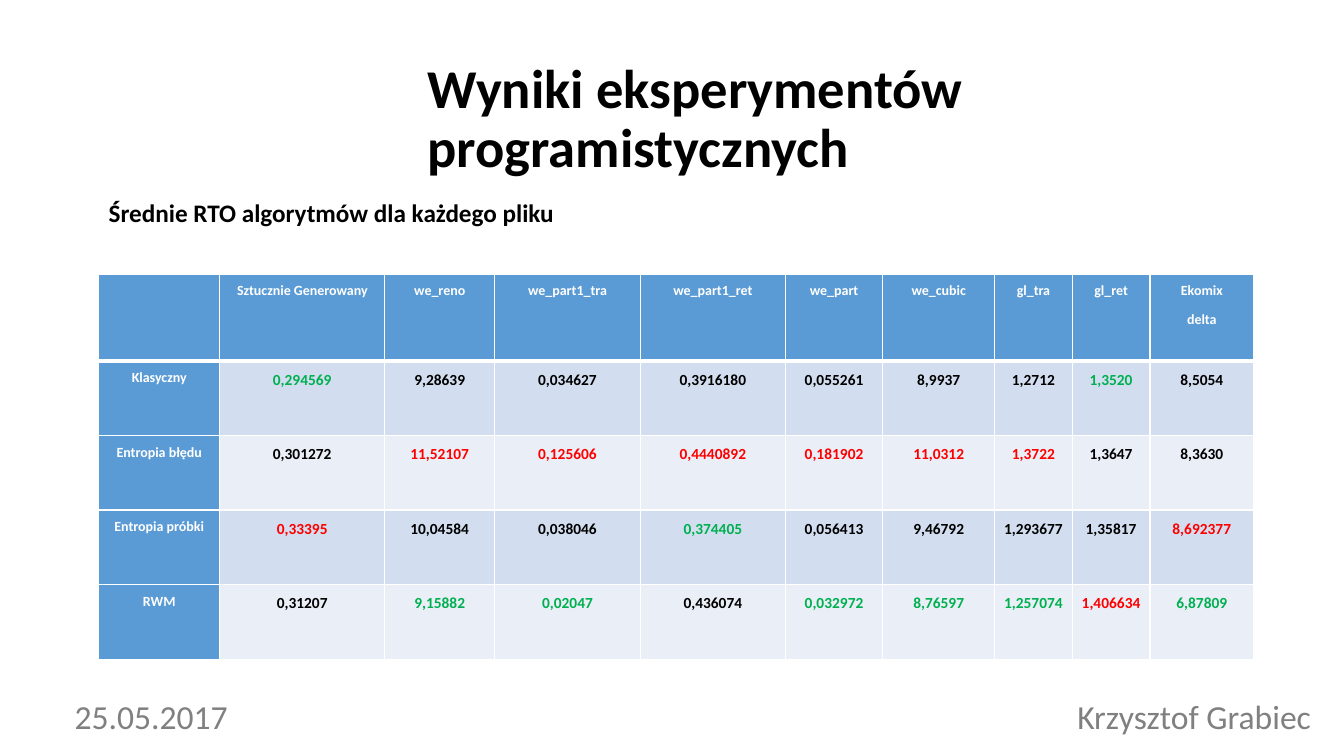
from lxml import etree
from pptx import Presentation
from pptx.dml.color import RGBColor
from pptx.enum.text import MSO_ANCHOR, MSO_AUTO_SIZE, PP_ALIGN
from pptx.oxml.ns import qn
from pptx.util import Cm, Pt

LEFT, CENTER = PP_ALIGN.LEFT, PP_ALIGN.CENTER
TOP, MIDDLE = MSO_ANCHOR.TOP, MSO_ANCHOR.MIDDLE
FIXED = MSO_AUTO_SIZE.NONE

BLACK = RGBColor(0x00, 0x00, 0x00)
WHITE = RGBColor(0xFF, 0xFF, 0xFF)
GRAY = RGBColor(0x80, 0x80, 0x80)
GREEN = RGBColor(0x00, 0xB0, 0x50)
RED = RGBColor(0xFF, 0x00, 0x00)
BLUE = RGBColor(0x5B, 0x9B, 0xD5)
BANDS = (RGBColor(0xEA, 0xEF, 0xF7), RGBColor(0xD2, 0xDE, 0xEF))

HEADS = ("", "Sztucznie Generowany", "we_reno", "we_part1_tra", "we_part1_ret",
         "we_part", "we_cubic", "gl_tra", "gl_ret", "Ekomix\ndelta")
# Label, values, and one mark per value: g best, r worst, k neutral
ROWS = (
    ("Klasyczny", "0,294569 9,28639 0,034627 0,3916180 0,055261 "
     "8,9937 1,2712 1,3520 8,5054", "gkkkkkkgk"),
    ("Entropia błędu", "0,301272 11,52107 0,125606 0,4440892 0,181902 "
     "11,0312 1,3722 1,3647 8,3630", "krrrrrrkk"),
    ("Entropia próbki", "0,33395 10,04584 0,038046 0,374405 0,056413 "
     "9,46792 1,293677 1,35817 8,692377", "rkkgkkkkr"),
    ("RWM", "0,31207 9,15882 0,02047 0,436074 0,032972 "
     "8,76597 1,257074 1,406634 6,87809", "kggkgggrg"),
)
MARKS = {"g": GREEN, "r": RED, "k": BLACK}
WIDTHS = (3.05, 4.17, 2.77, 3.68, 3.66, 2.46, 2.82, 1.96, 1.96, 2.62)
HEAD_H = 2.18


def apply(obj, form):
    for name, value in form.items():
        setattr(obj, name, value)


def write(frame, text, size, color, bold=True, **form):
    """Fill a text frame, one paragraph per line of text."""
    for i, line in enumerate(text.split("\n")):
        para = frame.paragraphs[0] if i == 0 else frame.add_paragraph()
        apply(para, form)
        if i:
            para.space_before = Pt(2)
        run = para.add_run()
        run.text = line
        apply(run.font, {"name": "Calibri", "size": Pt(size), "bold": bold})
        run.font.color.rgb = color


def add_title(slide, box, text):
    title = slide.shapes.title
    apply(title, dict(zip(("left", "top", "width", "height"), map(Cm, box))))
    apply(title.text_frame, {"word_wrap": True, "auto_size": FIXED,
                             "vertical_anchor": MIDDLE})
    write(title.text_frame, text, 39, BLACK, alignment=LEFT, line_spacing=0.9)


def add_label(slide, box, text, size, color, wrap=True, **form):
    frame = slide.shapes.add_textbox(*map(Cm, box)).text_frame
    apply(frame, {"word_wrap": wrap, "auto_size": FIXED})
    write(frame, text, size, color, **form)


def add_edges(cell, row):
    """Draw white cell borders, thicker under the header row."""
    props = cell._tc.get_or_add_tcPr()
    thick = {"T": row == 1, "B": row == 0}
    for i, side in enumerate("LRTB"):
        width = Pt(3 if thick.get(side) else 1)
        edge = etree.Element(qn("a:ln" + side), w=str(width))
        fill = etree.SubElement(edge, qn("a:solidFill"))
        etree.SubElement(fill, qn("a:srgbClr"), val=str(WHITE))
        props.insert(i, edge)


def fill_cell(cell, row, text, size, color, back):
    cell.fill.solid()
    cell.fill.fore_color.rgb = back
    apply(cell, {"margin_left": Cm(0.18), "margin_right": Cm(0.18),
                 "margin_top": 0, "margin_bottom": 0, "vertical_anchor": TOP})
    write(cell.text_frame, text, size, color,
          alignment=CENTER, line_spacing=1.5)
    add_edges(cell, row)


def add_grid(slide, box):
    table = slide.shapes.add_table(len(ROWS) + 1, len(HEADS),
                                   *map(Cm, box)).table
    for col, width in zip(table.columns, WIDTHS):
        col.width = Cm(width * box[2] / sum(WIDTHS))
    for i, row in enumerate(table.rows):
        row.height = Cm((box[3] - HEAD_H) / len(ROWS) if i else HEAD_H)
    # Header row
    for c, head in enumerate(HEADS):
        fill_cell(table.cell(0, c), 0, head, 10, WHITE, BLUE)
    # Algorithm rows
    for r, (label, values, marks) in enumerate(ROWS, 1):
        fill_cell(table.cell(r, 0), r, label, 10, WHITE, BLUE)
        for c, (value, mark) in enumerate(zip(values.split(), marks), 1):
            fill_cell(table.cell(r, c), r, value, 11, MARKS[mark], BANDS[r % 2])


def add_footer(slide, box, date, author):
    left, top, width, height = box
    part = 6.96
    for x, text, align in ((left, date, CENTER),
                           (left + width - part, author, LEFT)):
        add_label(slide, (x, top, part, height), text, 24, GRAY,
                  bold=False, alignment=align, line_spacing=0.9)


def main():
    deck = Presentation()
    deck.slide_width, deck.slide_height = Cm(33.87), Cm(19.05)
    slide = deck.slides.add_slide(deck.slide_layouts[5])
    add_grid(slide, (2.49, 6.91, 29.11, 9.7))
    add_title(slide, (10.52, 1.93, 24.28, 2.21),
              "Wyniki eksperymentów programistycznych")
    add_label(slide, (2.49, 4.47, 11.81, 1.42),
              "Średnie RTO algorytmów dla każdego pliku", 18, BLACK,
              wrap=False, line_spacing=1.5, space_after=Pt(10))
    add_footer(slide, (0.33, 17.53, 33.53, 1.52),
               "25.05.2017", "Krzysztof Grabiec")
    deck.save("out.pptx")


if __name__ == "__main__":
    main()
